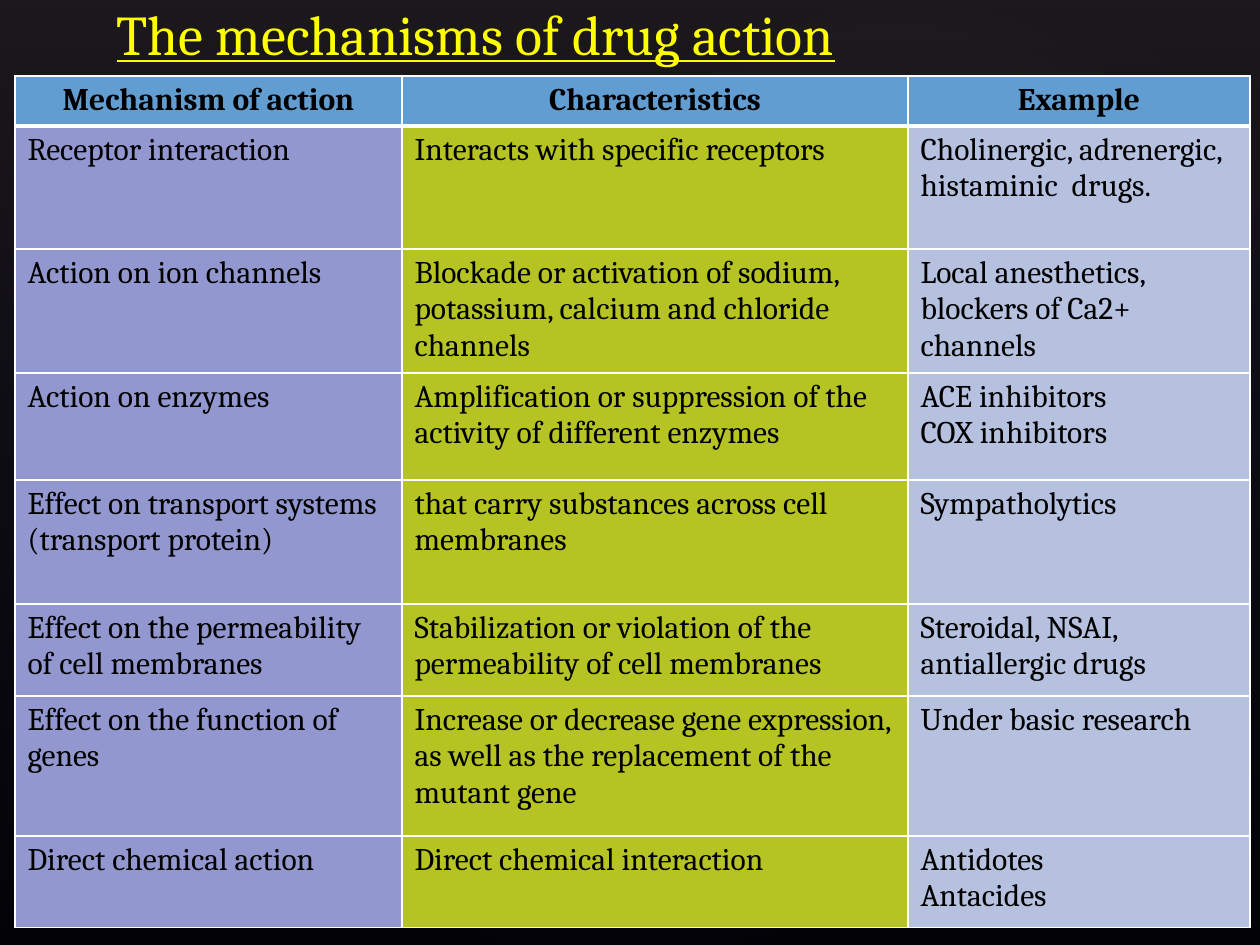
from typing import NamedTuple

from lxml.etree import SubElement
from pptx import Presentation
from pptx.dml.color import RGBColor
from pptx.enum.shapes import MSO_SHAPE
from pptx.enum.text import MSO_ANCHOR, PP_ALIGN
from pptx.oxml.ns import qn
from pptx.util import Emu, Pt

EMU_PER_PX = 914400 / 126
FONT = "Cambria"
HEADER_FILL = "629DD1"
TITLE_BOX = (104, 0, 1040, 73)
TABLE_ORIGIN = (15, 76)
ROW_HEIGHTS = (50, 123, 124, 107, 124, 92, 140, 92)
TITLE_FORMAT = {"name": FONT, "size": Pt(32), "underline": True, "bold": False}
HEADER_FORMAT = {"name": FONT, "size": Pt(18), "bold": True}
BODY_FORMAT = {**HEADER_FORMAT, "bold": False}


class Stop(NamedTuple):
    position: int
    color: str
    opacity: int


class Glow(NamedTuple):
    preset: MSO_SHAPE
    box: tuple[int, int, int, int]
    rotation: float
    stops: tuple[Stop, Stop]


class Column(NamedTuple):
    heading: str
    width: int
    fill: str


class Mechanism(NamedTuple):
    action: str
    characteristics: str
    example: str


VEIL = (Stop(0, "504652", 36), Stop(100, "242852", 10))
FAINT = (Stop(0, "C4BCC6", 7), Stop(58, "242852", 0))
SOFT = (Stop(0, "C4BCC6", 8), Stop(58, "242852", 0))
GLOWS = (
    Glow(MSO_SHAPE.RECTANGLE, (0, 0, 1260, 945), 0, VEIL),
    Glow(MSO_SHAPE.OVAL, (189, 144, 998, 786), 328.7, FAINT),
    Glow(MSO_SHAPE.OVAL, (-38, 161, 764, 617), 294.3, SOFT),
    Glow(MSO_SHAPE.OVAL, (451, 16, 893, 655), 328.7, SOFT),
)
COLUMNS = (
    Column("Mechanism of action", 387, "9297CF"),
    Column("Characteristics", 506, "B5C422"),
    Column("Example", 342, "B5C1DF"),
)
MECHANISMS = (
    Mechanism("Receptor interaction", "Interacts with specific receptors",
              "Cholinergic, adrenergic, histaminic  drugs."),
    Mechanism("Action on ion channels",
              "Blockade or activation of sodium, potassium, calcium and chloride channels",
              "Local anesthetics, blockers of Ca2+ channels"),
    Mechanism("Action on enzymes",
              "Amplification or suppression of the activity of different enzymes",
              "ACE inhibitors\nCOX inhibitors"),
    Mechanism("Effect on transport systems (transport protein)",
              "that carry substances across cell membranes", "Sympatholytics"),
    Mechanism("Effect on the permeability of cell membranes",
              "Stabilization or violation of the permeability of cell membranes",
              "Steroidal, NSAI, antiallergic drugs"),
    Mechanism("Effect on the function of genes",
              "Increase or decrease gene expression, as well as the replacement of the mutant gene",
              "Under basic research"),
    Mechanism("Direct chemical action", "Direct chemical interaction",
              "Antidotes\nAntacides"),
)


def px(length: int) -> Emu:
    """Turn whole pixels into EMU."""
    return Emu(round(length * EMU_PER_PX))


def rgb(value: str) -> RGBColor:
    """Turn a hex string into a colour."""
    return RGBColor.from_string(value)


def write(frame, text: str, formats: dict, color: str, align: PP_ALIGN) -> None:
    """Fill a text frame and format every run."""
    frame.text = text
    for paragraph in frame.paragraphs:
        paragraph.alignment = align
        for run in paragraph.runs:
            for attribute, value in formats.items():
                setattr(run.font, attribute, value)
            run.font.color.rgb = rgb(color)


def add_borders(cell, top: int, bottom: int) -> None:
    """Draw white borders with the given top and bottom widths in points."""
    properties = cell._tc.get_or_add_tcPr()
    widths = {"a:lnL": 1, "a:lnR": 1, "a:lnT": top, "a:lnB": bottom}
    for position, (side, width) in enumerate(widths.items()):
        line = properties.makeelement(qn(side), {"w": str(Pt(width))})
        properties.insert(position, line)
        SubElement(SubElement(line, qn("a:solidFill")), qn("a:srgbClr"), val="FFFFFF")


def add_glow(slide, glow: Glow) -> None:
    """Add a translucent shape, radial for ovals and vertical otherwise."""
    shape = slide.shapes.add_shape(glow.preset, *map(px, glow.box))
    shape.rotation = glow.rotation
    shape.shadow.inherit = False
    shape.line.fill.background()
    shape.fill.gradient()
    shape.fill.gradient_angle = 270
    gradient = shape._element.spPr.find(qn("a:gradFill"))
    for stop, part in zip(shape.fill.gradient_stops, glow.stops):
        stop.position = part.position / 100
        stop.color.rgb = rgb(part.color)
    for color, part in zip(gradient.iter(qn("a:srgbClr")), glow.stops):
        SubElement(color, qn("a:alpha"), val=str(part.opacity * 1000))
    if glow.preset == MSO_SHAPE.OVAL:
        radial = gradient.makeelement(qn("a:path"), {"path": "circle"})
        gradient.replace(gradient.find(qn("a:lin")), radial)
        SubElement(radial, qn("a:fillToRect"), dict.fromkeys("ltrb", "50000"))


def add_backdrop(slide) -> None:
    """Layer the glows on black, behind the title."""
    slide.background.fill.solid()
    slide.background.fill.fore_color.rgb = rgb("000000")
    for glow in GLOWS:
        add_glow(slide, glow)
    slide.shapes._spTree.append(slide.shapes.title._element)


def add_title(slide, text: str) -> None:
    """Place and format the title placeholder."""
    title = slide.shapes.title
    title.left, title.top, title.width, title.height = map(px, TITLE_BOX)
    write(title.text_frame, text, TITLE_FORMAT, "FFFF00", PP_ALIGN.LEFT)
    title.text_frame.vertical_anchor = MSO_ANCHOR.BOTTOM


def add_mechanism_table(slide) -> None:
    """Build the table of mechanisms under its header row."""
    rows = [tuple(column.heading for column in COLUMNS), *MECHANISMS]
    width = sum(column.width for column in COLUMNS)
    table = slide.shapes.add_table(
        len(rows), len(COLUMNS), *map(px, (*TABLE_ORIGIN, width, sum(ROW_HEIGHTS)))
    ).table
    for grid_column, column in zip(table.columns, COLUMNS):
        grid_column.width = px(column.width)
    for index, (texts, height) in enumerate(zip(rows, ROW_HEIGHTS)):
        header = index == 0
        table.rows[index].height = px(height)
        for cell, text, column in zip(table.rows[index].cells, texts, COLUMNS):
            cell.fill.solid()
            cell.fill.fore_color.rgb = rgb(HEADER_FILL if header else column.fill)
            write(cell.text_frame, text, HEADER_FORMAT if header else BODY_FORMAT,
                  "000000", PP_ALIGN.CENTER if header else PP_ALIGN.LEFT)
            add_borders(cell, top=3 if index == 1 else 1, bottom=3 if header else 1)


def main() -> None:
    """Build and save the slide."""
    presentation = Presentation()
    presentation.slide_width, presentation.slide_height = px(1260), px(945)
    slide = presentation.slides.add_slide(presentation.slide_layouts[5])
    add_backdrop(slide)
    add_title(slide, "The mechanisms of drug action")
    add_mechanism_table(slide)
    presentation.save("out.pptx")


if __name__ == "__main__":
    main()
